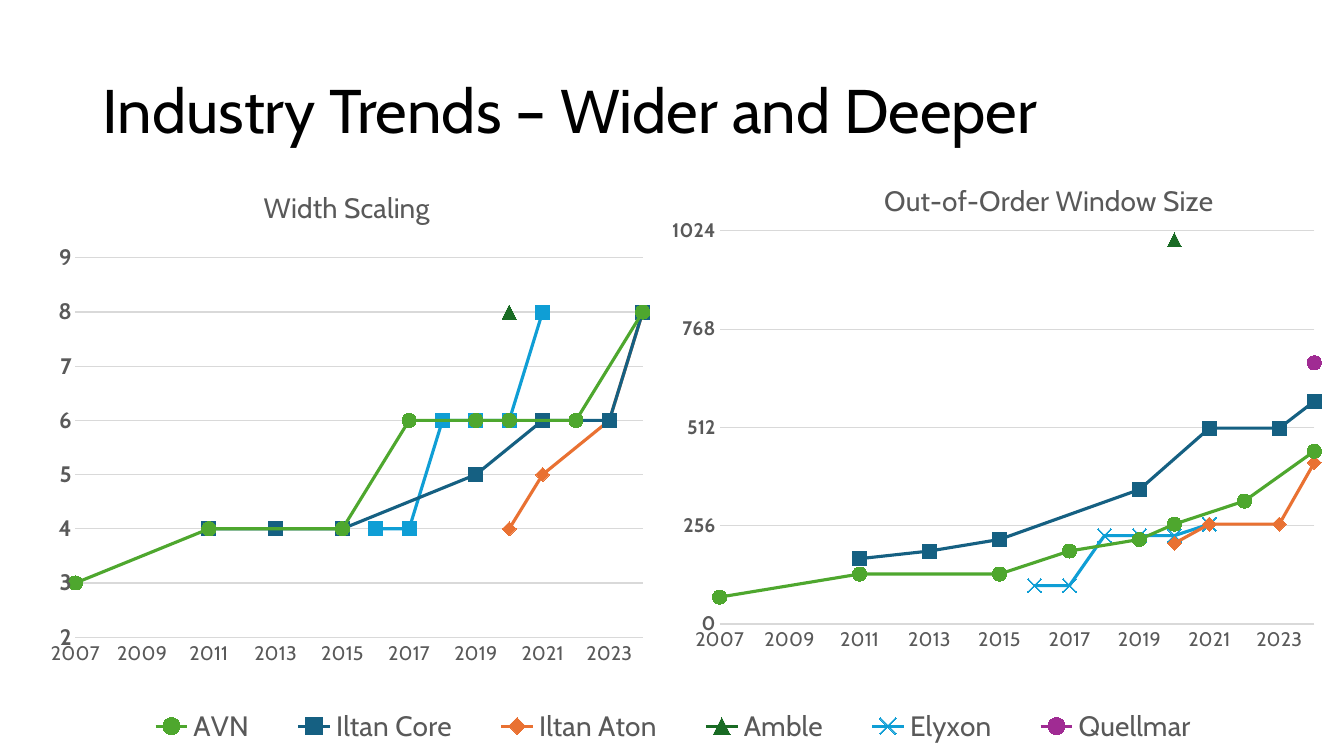
from lxml.etree import SubElement
from pptx import Presentation
from pptx.chart.data import XyChartData
from pptx.dml.color import RGBColor
from pptx.enum.chart import XL_CHART_TYPE, XL_LEGEND_POSITION, XL_MARKER_STYLE, XL_TICK_MARK
from pptx.enum.text import MSO_ANCHOR, MSO_AUTO_SIZE, PP_ALIGN
from pptx.oxml.ns import qn
from pptx.util import Cm, Pt

BLACK = RGBColor(0x00, 0x00, 0x00)
GRAY = RGBColor(0x59, 0x59, 0x59)
RULE = RGBColor(0xD9, 0xD9, 0xD9)
GREEN = RGBColor(0x4E, 0xA7, 0x2E)
NAVY = RGBColor(0x15, 0x60, 0x82)
ORANGE = RGBColor(0xE9, 0x71, 0x32)
PINE = RGBColor(0x19, 0x6B, 0x24)
BLUE = RGBColor(0x0F, 0x9E, 0xD5)
SKY = RGBColor(0x00, 0xB0, 0xF0)
PLUM = RGBColor(0xA0, 0x2B, 0x93)

MARK = XL_MARKER_STYLE
LOOKS = [
    (GREEN, MARK.CIRCLE),
    (NAVY, MARK.SQUARE),
    (ORANGE, MARK.DIAMOND),
    (PINE, MARK.TRIANGLE),
    (BLUE, MARK.X),
    (PLUM, MARK.CIRCLE),
]
YEARS = [2007, 2011, 2013, *range(2015, 2025)]
WINDOW = {
    "AVN": {2007: 70, 2011: 130, 2015: 130, 2017: 190, 2019: 220,
            2020: 260, 2022: 320, 2024: 450},
    "Iltan Core": {2011: 170, 2013: 190, 2015: 220, 2019: 350,
                   2021: 510, 2023: 510, 2024: 580},
    "Iltan Aton": {2020: 210, 2021: 260, 2023: 260, 2024: 420},
    "Amble": {2020: 1000},
    "Elyxon": {2016: 100, 2017: 100, 2018: 230, 2019: 230, 2020: 230, 2021: 260},
    "Quellmar": {2024: 680},
}
WIDTH = {
    "Series 1": {2007: 3, 2011: 4, 2015: 4, 2017: 6, 2019: 6,
                 2020: 6, 2022: 6, 2024: 8},
    "Series 2": {2011: 4, 2013: 4, 2015: 4, 2019: 5, 2021: 6, 2023: 6, 2024: 8},
    "Series 3": {2020: 4, 2021: 5, 2023: 6, 2024: 8},
    "Series 4": {2020: 8},
    "Series 5": {2016: 4, 2017: 4, 2018: 6, 2019: 6, 2020: 6, 2021: 8},
    "Series 6": {2024: 8},
}


def put(item, values):
    for name, value in values.items():
        setattr(item, name, value)


class Deck:
    face = "Cabin"

    def __init__(self):
        self.show = Presentation()
        put(self.show, {"slide_width": Cm(33.87), "slide_height": Cm(19.05)})
        self.slide = self.show.slides.add_slide(self.show.slide_layouts[5])

    def font(self, font, size, color=GRAY, bold=False):
        put(font, {"name": self.face, "size": Pt(size), "bold": bold})
        font.color.rgb = color

    def title(self, text, box):
        shape = self.slide.shapes.title
        put(shape, dict(zip(("left", "top", "width", "height"), map(Cm, box))))
        frame = shape.text_frame
        frame.text = text
        put(frame, {"vertical_anchor": MSO_ANCHOR.MIDDLE, "word_wrap": True,
                    "auto_size": MSO_AUTO_SIZE.NONE})
        line = frame.paragraphs[0]
        put(line, {"alignment": PP_ALIGN.LEFT, "line_spacing": 0.9})
        self.font(line.runs[0].font, 44, BLACK)

    def layout(self, owner, index, shares, inner=False):
        old = owner.find(qn("c:layout"))
        if old is not None:
            owner.remove(old)
        node = SubElement(owner, qn("c:layout"))
        owner.insert(index, node)
        manual = SubElement(node, qn("c:manualLayout"))
        values = {"layoutTarget": "inner"} if inner else {}
        values.update(xMode="edge", yMode="edge")
        values.update(zip("xywh", (round(share / 100, 4) for share in shares)))
        for tag, value in values.items():
            SubElement(manual, qn("c:" + tag)).set("val", str(value))

    def axis(self, axis, size, low, high, step, bold=False):
        put(axis, {"minimum_scale": low, "maximum_scale": high, "major_unit": step,
                   "major_tick_mark": XL_TICK_MARK.NONE,
                   "minor_tick_mark": XL_TICK_MARK.NONE,
                   "has_major_gridlines": bold})
        put(axis.tick_labels, {"number_format": "General",
                               "number_format_is_linked": False})
        self.font(axis.tick_labels.font, size, GRAY, bold)
        line = axis.format.line
        if bold:
            line.fill.background()
            line = axis.major_gridlines.format.line
        line.color.rgb = RULE
        line.width = Pt(0.75)

    def span(self, root):
        for point in list(root.iter(qn("c:pt"))):
            if point.findtext(qn("c:v")) == "None":
                point.getparent().remove(point)
        for blank in root.iter(qn("c:dispBlanksAs")):
            blank.set("val", "span")

    def chart(self, head, rows, looks, box, spot, plot, scale, size):
        data = XyChartData(number_format="General")
        for name, points in rows.items():
            row = data.add_series(name)
            for year in YEARS:
                row.add_data_point(year, points.get(year))
        chart = self.slide.shapes.add_chart(
            XL_CHART_TYPE.XY_SCATTER_LINES, *map(Cm, box), data).chart
        root = chart._chartSpace
        self.span(root)
        self.font(chart.font, 10, BLACK)
        put(chart, {"has_title": True, "has_legend": False})
        frame = chart.chart_title.text_frame
        frame.text = head
        self.font(frame.paragraphs[0].runs[0].font, 20)
        self.layout(chart.chart_title._element, 1, spot)
        self.layout(root.chart.plotArea, 0, plot, True)
        clear = SubElement(root, qn("c:spPr"))
        SubElement(clear, qn("a:noFill"))
        SubElement(SubElement(clear, qn("a:ln")), qn("a:noFill"))
        root.chart.addnext(clear)
        self.axis(chart.category_axis, 14, 2007, 2024, 2)
        self.axis(chart.value_axis, size, *scale, bold=True)
        chart.plots[0].vary_by_categories = False
        for row, (color, style) in zip(chart.plots[0].series, looks):
            row.smooth = False
            row.format.line.color.rgb = color
            row.format.line.width = Pt(2.25)
            put(row.marker, {"style": style, "size": 10})
            shade = SKY if color == BLUE and style == MARK.SQUARE else color
            row.marker.format.fill.solid()
            row.marker.format.fill.fore_color.rgb = shade
            row.marker.format.line.color.rgb = color
        return chart

    def legend(self, chart, shares):
        chart.has_legend = True
        put(chart.legend, {"position": XL_LEGEND_POSITION.BOTTOM,
                           "include_in_layout": False})
        self.font(chart.legend.font, 20)
        self.layout(chart.legend._element, 1, shares)


def main():
    deck = Deck()
    deck.title("Industry Trends – Wider and Deeper", (2.33, 1.01, 29.21, 3.68))
    window = deck.chart("Out-of-Order Window Size", WINDOW, LOOKS,
                        (0.41, 4.01, 33.45, 15.04), (65, 2.8),
                        (53, 12, 44.8, 65.9), (0, 1024, 256), 14)
    deck.legend(window, (7.5, 91, 84, 8))
    looks = [(color, MARK.SQUARE if style == MARK.X else style)
             for color, style in LOOKS]
    deck.chart("Width Scaling", WIDTH, looks,
               (0.97, 4.22, 15.54, 12.8), (35.7, 3),
               (6, 17.8, 92, 74.7), (2, 9, 1), 16)
    deck.show.save("out.pptx")


if __name__ == "__main__":
    main()
